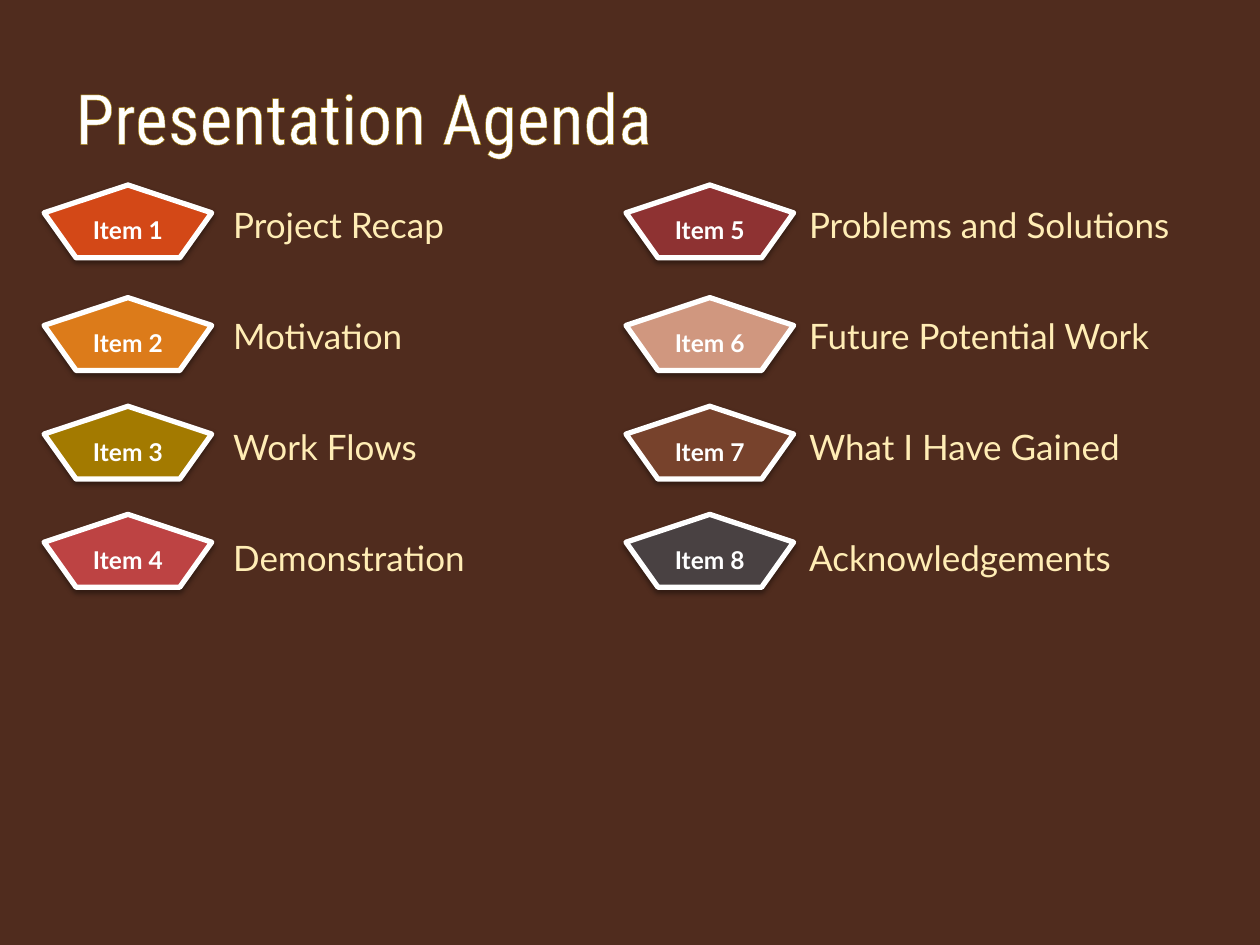
from lxml import etree
from pptx import Presentation
from pptx.dml.color import RGBColor
from pptx.enum.shapes import MSO_SHAPE
from pptx.enum.text import MSO_ANCHOR, PP_ALIGN
from pptx.oxml import parse_xml
from pptx.oxml.ns import nsdecls, qn
from pptx.util import Cm, Pt

PENTAGON = MSO_SHAPE.REGULAR_PENTAGON
MIDDLE = MSO_ANCHOR.MIDDLE
LEFT, CENTER = PP_ALIGN.LEFT, PP_ALIGN.CENTER

SHADOW = """<a:outerShdw %s blurRad="39370" dist="20320" dir="5400000" rotWithShape="0">
<a:srgbClr val="000000"><a:alpha val="38000"/></a:srgbClr></a:outerShdw>""" % nsdecls("a")
OUTLINE = """<a:ln %s w="9525"><a:solidFill><a:srgbClr val="A37A00"/></a:solidFill>
</a:ln>""" % nsdecls("a")

# Each column: badge left, label left, then (label, label width, badge fill)
COLUMNS = [
    (0.89, 4.29, [("Project Recap", 17.58, "D34817"),
                  ("Motivation", 17.58, "DC7B1A"),
                  ("Work Flows", 8.33, "A37A00"),
                  ("Demonstration", 17.58, "BD4343")]),
    (12.62, 15.9, [("Problems and Solutions", 17.58, "8E3232"),
                   ("Future Potential Work", 17.58, "D0977F"),
                   ("What I Have Gained", 17.58, "77422C"),
                   ("Acknowledgements", 17.58, "494142")]),
]
BADGE_TOPS = [3.73, 6.0, 8.19, 10.37]
LABEL_TOP, LABEL_STEP = 3.97, 2.24


def color(hex_string):
    return RGBColor.from_string(hex_string)


def write(shape, text, size, font_name, hex_string, alignment, bold=False):
    paragraph = shape.text_frame.paragraphs[0]
    run = paragraph.add_run()
    run.text = text
    paragraph.alignment = alignment
    paragraph.font.size = Pt(size)
    paragraph.font.name = font_name
    paragraph.font.bold = bold
    paragraph.font.color.rgb = color(hex_string)
    return run


presentation = Presentation()
presentation.slide_width, presentation.slide_height = Cm(25.4), Cm(19.05)
slide = presentation.slides.add_slide(presentation.slide_layouts[5])
slide.background.fill.solid()
slide.background.fill.fore_color.rgb = color("502C1E")

# Title with a thin outline around the letters
title = slide.shapes.title
title.left, title.top, title.width, title.height = Cm(1.27), Cm(0.76), Cm(22.86), Cm(3.18)
title.text_frame.vertical_anchor = MIDDLE
title_run = write(title, "Presentation Agenda", 40, "Roboto Condensed", "FFFFFF", LEFT)
title_run.font._element.insert(0, parse_xml(OUTLINE))

# Agenda items: numbered badge and label, down each column
item_number = 0
for badge_left, label_left, items in COLUMNS:
    for row, (text, label_width, fill) in enumerate(items):
        item_number += 1

        label = slide.shapes.add_textbox(Cm(label_left), Cm(LABEL_TOP + row * LABEL_STEP),
                                         Cm(label_width), Cm(2.34))
        label.text_frame.word_wrap = True
        label.text_frame.margin_left = Cm(0.41)
        write(label, text, 20, "Lato", "FFEDB5", LEFT)

        badge = slide.shapes.add_shape(PENTAGON, Cm(badge_left), Cm(BADGE_TOPS[row]),
                                       Cm(3.38), Cm(1.47))
        badge.fill.solid()
        badge.fill.fore_color.rgb = color(fill)
        badge.line.color.rgb = color("FFFFFF")
        badge.line.width = Pt(3)
        badge.shadow.inherit = False
        effects = badge._element.spPr.find(qn("a:effectLst"))
        effects.append(etree.fromstring(SHADOW))
        badge.text_frame.vertical_anchor = MIDDLE
        write(badge, f"Item {item_number}", 14, "Lato", "FFFFFF", CENTER, bold=True)

presentation.save("out.pptx")
